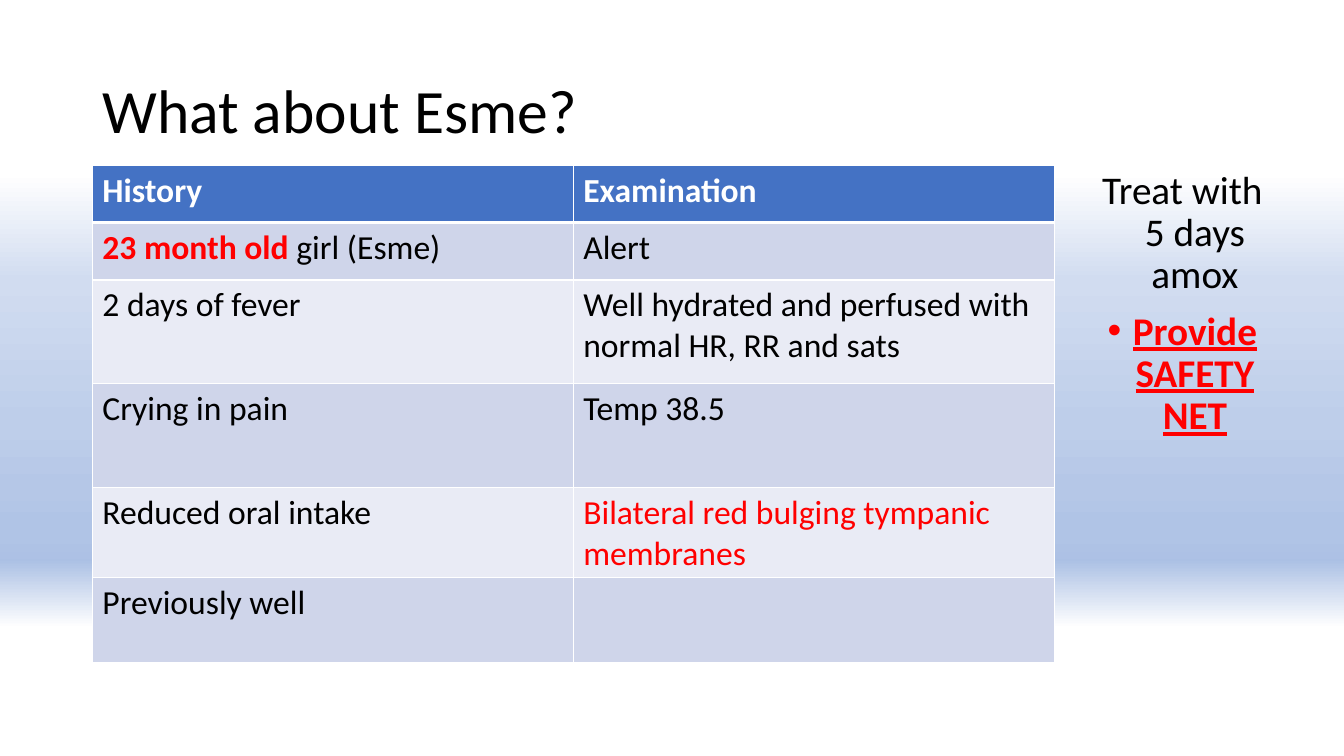
"""Build the slide with Esme's history, examination and treatment."""
from lxml import etree
from pptx import Presentation
from pptx.dml.color import RGBColor
from pptx.enum.text import MSO_ANCHOR, MSO_AUTO_SIZE, PP_ALIGN
from pptx.oxml.ns import qn
from pptx.util import Pt

LEFT, CENTER = PP_ALIGN.LEFT, PP_ALIGN.CENTER
MIDDLE = MSO_ANCHOR.MIDDLE
NO_AUTOFIT = MSO_AUTO_SIZE.NONE
BLACK, WHITE, RED = "000000", "FFFFFF", "FF0000"
HEADER_BLUE, BAND_DARK, BAND_LIGHT = "4472C4", "CFD5EA", "E9EBF5"


def rgb(value):
    return RGBColor.from_string(value)


def add_text(paragraph, text, size=24, color=BLACK, bold=False, underline=False):
    run = paragraph.add_run()
    run.text = text
    font = run.font
    font.name, font.size = "Calibri", Pt(size)
    font.bold, font.underline = bold, underline
    font.color.rgb = rgb(color)


deck = Presentation()
deck.slide_width, deck.slide_height = Pt(960), Pt(540)
slide = deck.slides.add_slide(deck.slide_layouts[5])

backdrop = slide.background.fill
backdrop.gradient()
backdrop.gradient_angle = 270
stops = slide.background._cSld.find(".//" + qn("a:gsLst"))
for stop in list(stops):
    stops.remove(stop)
for percent, color in [
    (23, WHITE), (37, "D1DCF0"), (56, "BECEEA"), (65, "B5C7E7"), (69, "B0C4E6"),
    (72, "AEC2E5"), (73, "ADC1E5"), (74, "ABC0E4"), (83, WHITE),
]:
    stop = etree.SubElement(stops, qn("a:gs"), pos=str(percent * 1000))
    etree.SubElement(stop, qn("a:srgbClr"), val=color)

title = slide.shapes.title
title.left, title.top, title.width, title.height = Pt(66), Pt(29), Pt(672.5), Pt(104)
title.text_frame.auto_size = NO_AUTOFIT
title.text_frame.vertical_anchor = MIDDLE
heading = title.text_frame.paragraphs[0]
heading.alignment, heading.line_spacing = LEFT, 0.9
add_text(heading, "What about Esme?", size=44)

plan = slide.shapes.add_textbox(Pt(774.7), Pt(118), Pt(139.7), Pt(342.7)).text_frame
plan.word_wrap = True
treatment, safety_net = plan.paragraphs[0], plan.add_paragraph()
for advice, bullet in [(treatment, None), (safety_net, "•")]:
    advice.alignment, advice.line_spacing = CENTER, 0.9
    properties = advice._p.get_or_add_pPr()
    properties.set("marL", str(Pt(18)))
    properties.set("indent", str(-Pt(18)))
    if bullet:
        advice.space_before = Pt(10)
        etree.SubElement(properties, qn("a:buFont"), typeface="Arial")
        etree.SubElement(properties, qn("a:buChar"), char=bullet)
    else:
        etree.SubElement(properties, qn("a:buNone"))
add_text(treatment, "Treat with 5 days amox", size=28)
add_text(safety_net, "Provide SAFETY NET", size=28, color=RED, bold=True, underline=True)

header = {"color": WHITE, "bold": True}
alarm = {"color": RED}
findings = [
    ([("History", header)], [("Examination", header)]),
    ([("23 month old ", {"color": RED, "bold": True}), ("girl (Esme)", {})], [("Alert", {})]),
    ([("2 days of fever", {})],
     [("Well hydrated and perfused with normal HR, RR and sats", {})]),
    ([("Crying in pain", {})], [("Temp 38.5", {})]),
    ([("Reduced oral intake", {})], [("Bilateral red bulging tympanic membranes", alarm)]),
    ([("Previously well", {})], []),
]
row_heights = [41, 41, 74, 74, 60.5, 60.5]
table = slide.shapes.add_table(
    len(findings), 2, Pt(66), Pt(118), Pt(687), Pt(sum(row_heights))
).table
table.horz_banding = False
for column in table.columns:
    column.width = Pt(343.5)
for row, (entries, height) in enumerate(zip(findings, row_heights)):
    table.rows[row].height = Pt(height)
    band = HEADER_BLUE if row == 0 else BAND_DARK if row % 2 else BAND_LIGHT
    thick_edge = {0: "lnB", 1: "lnT"}.get(row)
    for column, pieces in enumerate(entries):
        cell = table.cell(row, column)
        cell_properties = cell._tc.get_or_add_tcPr()
        for edge in ("lnL", "lnR", "lnT", "lnB"):
            width = Pt(3 if edge == thick_edge else 1)
            border = etree.SubElement(cell_properties, qn("a:" + edge), w=str(width))
            paint = etree.SubElement(border, qn("a:solidFill"))
            etree.SubElement(paint, qn("a:srgbClr"), val=WHITE)
        cell.fill.solid()
        cell.fill.fore_color.rgb = rgb(band)
        for text, style in pieces:
            add_text(cell.text_frame.paragraphs[0], text, **style)

deck.save("out.pptx")
